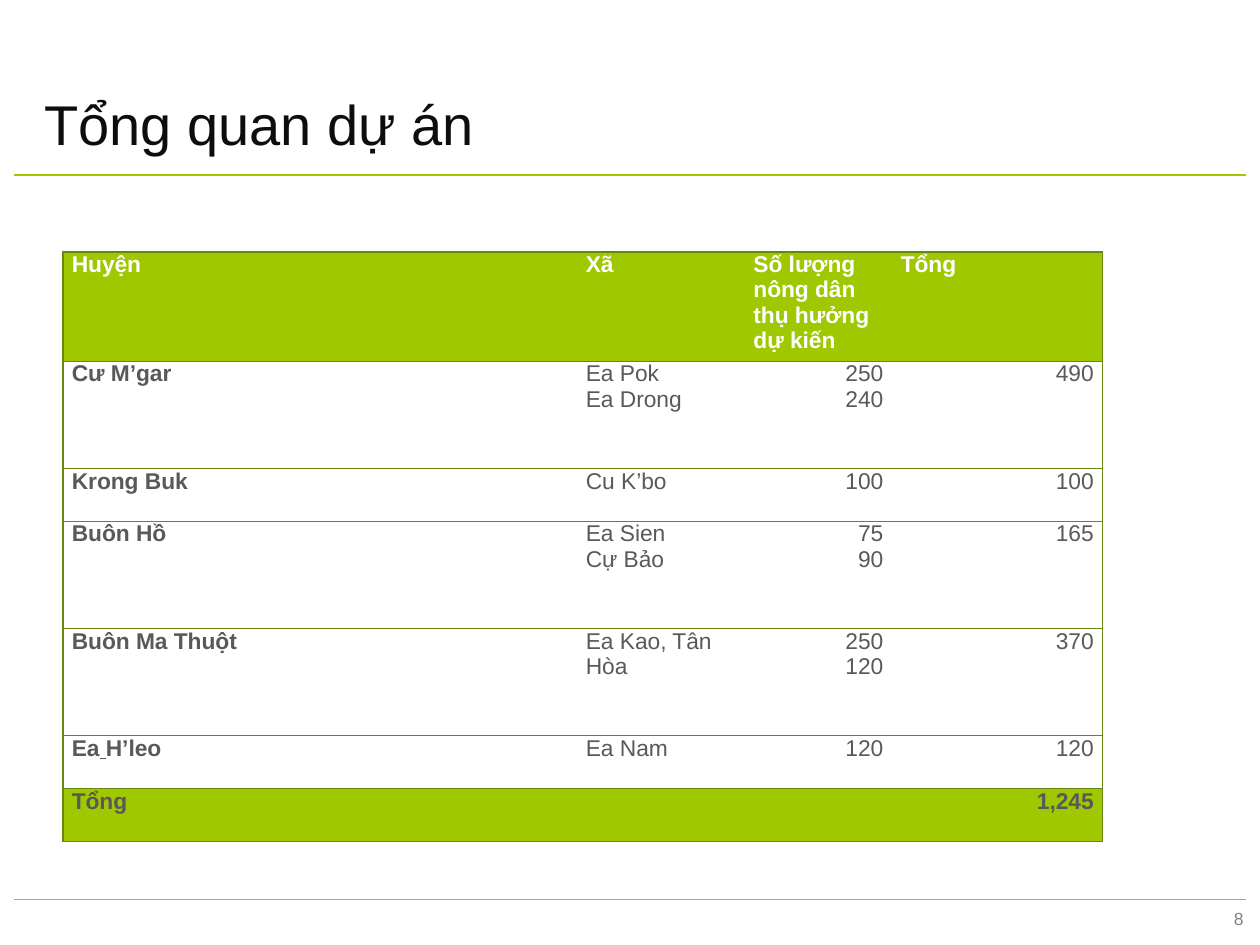
from lxml.etree import SubElement
from pptx import Presentation
from pptx.dml.color import RGBColor
from pptx.enum.shapes import MSO_CONNECTOR as Connector
from pptx.enum.text import MSO_ANCHOR as Anchor, PP_ALIGN as Align
from pptx.oxml.ns import qn
from pptx.util import Inches, Pt

GREEN, EDGE, WHITE, GREY = "A0C800", "688711", "FFFFFF", "595959"

COLUMNS = [4.08, 1.33, 1.17, 1.67]
ROW_HEIGHTS = [0.85, 0.85, 0.42, 0.85, 0.85, 0.42, 0.42]
ROWS = [
    ["Huyện", "Xã", "Số lượng nông dân thụ hưởng dự kiến", "Tổng"],
    ["Cư M’gar", "Ea Pok\nEa Drong", "250\n240", "490"],
    ["Krong Buk", "Cu K’bo", "100", "100"],
    ["Buôn Hồ", "Ea Sien\nCự Bảo", "75\n90", "165"],
    ["Buôn Ma Thuột", "Ea Kao, Tân Hòa", "250\n120", "370"],
    [["Ea", " ", "H’leo"], "Ea Nam", "120", "120"],
    ["Tổng", "", "", "1,245"],
]


def rgb(code):
    return RGBColor.from_string(code)


class SlideBuilder:
    font = "Arial"

    def __init__(self, page):
        self.page = page

    def style(self, para, size, color, bold=False, align=Align.LEFT):
        para.alignment = align
        para.font.name = self.font
        para.font.size = Pt(size)
        para.font.bold = bold
        para.font.color.rgb = rgb(color)

    def rule(self, y):
        line = self.page.shapes.add_connector(
            Connector.STRAIGHT, Inches(0.11), Inches(y), Inches(9.89), Inches(y))
        line.line.color.rgb = rgb(GREEN)
        line.line.width = Pt(1)
        SubElement(line._element.spPr, qn("a:effectLst"))

    def text(self, words, place, size, color, anchor, align=Align.LEFT, insets=(0, 0, 0, 0)):
        box = self.page.shapes.add_textbox(*map(Inches, place))
        frame = box.text_frame
        frame.word_wrap = True
        frame.vertical_anchor = anchor
        (frame.margin_left, frame.margin_top,
         frame.margin_right, frame.margin_bottom) = map(Inches, insets)
        para = frame.paragraphs[0]
        para.text = words
        self.style(para, size, color, align=align)
        return para

    def borders(self, cell, shown):
        properties = cell._tc.get_or_add_tcPr()
        for side in "LRTB":
            edge = SubElement(properties, qn(f"a:ln{side}"), w=str(Pt(0.75)))
            if side in shown:
                fill = SubElement(edge, qn("a:solidFill"))
                SubElement(fill, qn("a:srgbClr"), val=EDGE)
            else:
                SubElement(edge, qn("a:noFill"))

    def cell(self, cell, content, filled, color, bold, align):
        cell.margin_left = cell.margin_right = Inches(0.07)
        cell.margin_top = cell.margin_bottom = 0
        if filled:
            cell.fill.solid()
            cell.fill.fore_color.rgb = rgb(GREEN)
        else:
            cell.fill.background()
        frame = cell.text_frame
        if isinstance(content, list):
            # The gap between the parts of a name is underlined
            for part in content:
                span = frame.paragraphs[0].add_run()
                span.text = part
                if part == " ":
                    span.font.underline = True
        else:
            frame.text = content
        for para in frame.paragraphs:
            self.style(para, 13, color, bold, align)

    def table(self, rows, left, top, widths, heights):
        frame = self.page.shapes.add_table(
            len(rows), len(widths), Inches(left), Inches(top),
            Inches(sum(widths)), Inches(sum(heights)))
        table = frame.table
        table.first_row = table.horz_banding = False
        for column, width in zip(table.columns, widths):
            column.width = Inches(width)
        for row, height in zip(table.rows, heights):
            row.height = Inches(height)
        last_row, last_column = len(rows) - 1, len(widths) - 1
        for r, row in enumerate(rows):
            for c, content in enumerate(row):
                cell = table.cell(r, c)
                outer = {0: "L", last_column: "R"}.get(c, "")
                self.borders(cell, "TB" + outer)
                self.cell(cell, content,
                          filled=r in (0, last_row),
                          color=WHITE if r == 0 else GREY,
                          bold=r in (0, last_row) or c == 0,
                          align=Align.RIGHT if r > 0 and c > 1 else Align.LEFT)


def main():
    deck = Presentation()
    deck.slide_width, deck.slide_height = Inches(10), Inches(7.5)
    builder = SlideBuilder(deck.slides.add_slide(deck.slide_layouts[6]))

    # Header and footer rules
    for y in (1.39, 7.14):
        builder.rule(y)

    # Page number
    number = builder.text("8", (9.4, 7.05, 0.47, 0.4), 10, "828282", Anchor.MIDDLE,
                          Align.RIGHT, (0.1, 0.05, 0, 0.05))
    number.line_spacing = 1.5

    # Title
    builder.text("Tổng quan dự án", (0.35, 0.05, 9.29, 1.19), 32, "0D0D0D", Anchor.BOTTOM)

    # Farmers by district and commune
    builder.table(ROWS, 0.5, 2, COLUMNS, ROW_HEIGHTS)

    deck.save("out.pptx")


if __name__ == "__main__":
    main()
